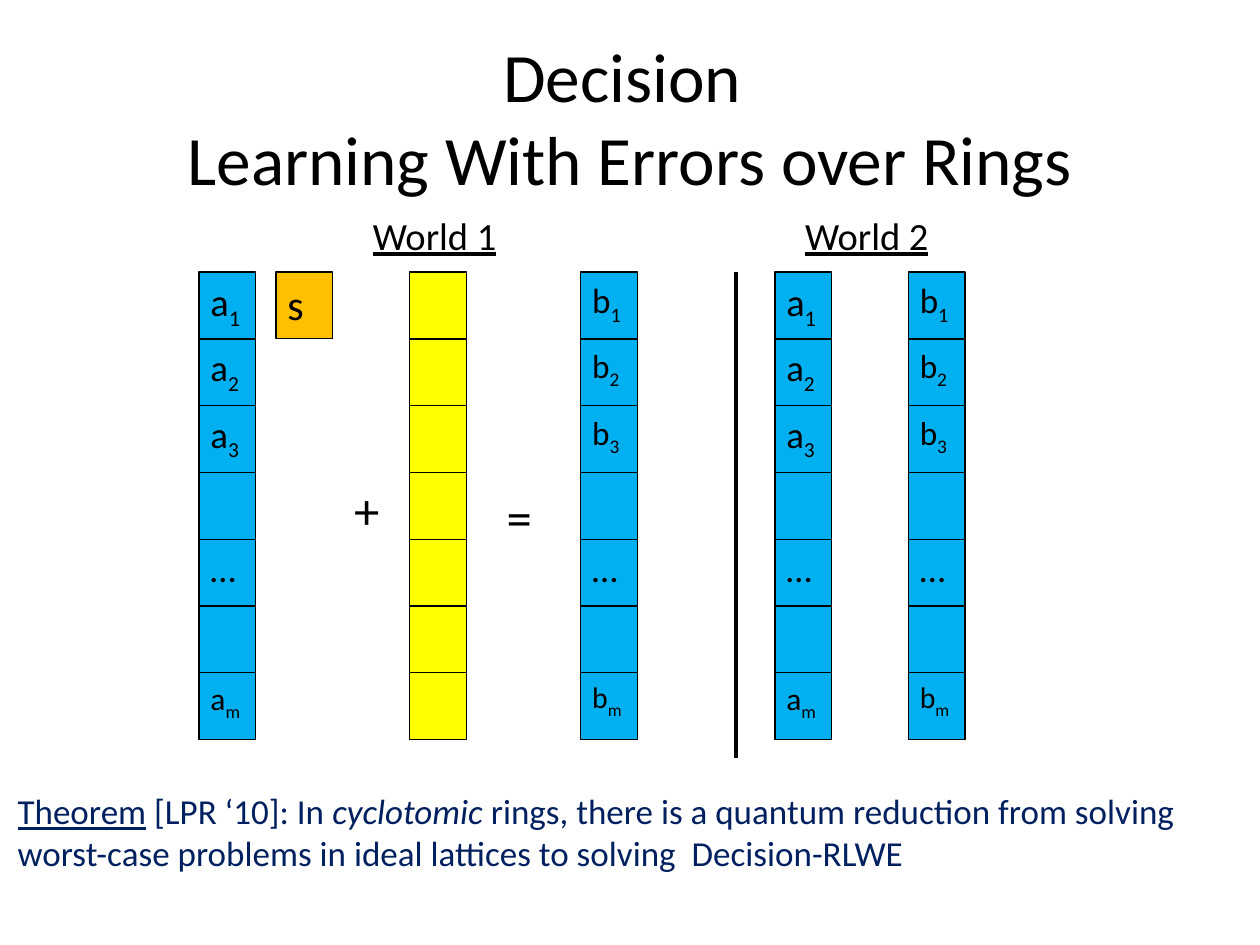
from lxml.etree import SubElement
from pptx import Presentation
from pptx.dml.color import RGBColor
from pptx.enum.shapes import MSO_CONNECTOR as Connector, MSO_SHAPE as Shape
from pptx.enum.text import MSO_ANCHOR as Anchor, PP_ALIGN as Align
from pptx.oxml.ns import qn
from pptx.util import Inches, Pt

COLORS = {"black": "000000", "blue": "00B0F0", "yellow": "FFFF00",
          "orange": "FFC000", "navy": "002060"}
FONT = "Calibri"
CELL_WIDTH, CELL_HEIGHT, GRID_TOP = 0.45, 0.53, 2.16

A_CELLS = [("a", "1", 22), ("a", "2", 21), ("a", "3", 21), None,
           ("…", "", 21), None, ("a", "m", 18)]
B_CELLS = [("b", "1", 20), ("b", "2", 19), ("b", "3", 19), None,
           ("…", "", 21), None, ("b", "m", 17)]
COLUMNS = [
    (1.58, "blue", A_CELLS),
    (2.19, "orange", [("s", "", 24)]),
    (3.25, "yellow", [None] * 7),
    (4.61, "blue", B_CELLS),
    (6.15, "blue", A_CELLS),
    (7.21, "blue", B_CELLS),
]
TITLE = [("Decision ", ""), ("\n", ""), ("Learning With Errors over Rings", "")]
THEOREM = [
    ("Theorem", "underline"),
    (" [LPR ‘10]: In ", ""),
    ("cyclotomic", "italic"),
    (" rings, there is a quantum reduction from solving worst-case problems"
     " in ideal lattices to solving  Decision-RLWE", ""),
]
TEXT_BOXES = [
    ((0.5, 0.3, 9, 1.25), TITLE,
     {"size": 39.6, "align": Align.CENTER, "anchor": Anchor.MIDDLE}),
    ((2.72, 3.75, 0.38, 0.58), [("+", "")], {"size": 29}),
    ((3.93, 3.81, 0.38, 0.58), [("=", "")], {"size": 29}),
    ((0.05, 6.22, 9.6, 0.76), THEOREM, {"size": 20, "color": "navy"}),
    ((2.87, 1.63, 1.36, 0.46), [("World 1", "underline")], {"size": 22}),
    ((6.3, 1.63, 1.36, 0.46), [("World 2", "underline")], {"size": 22}),
]


def rgb(name):
    return RGBColor.from_string(COLORS[name])


def write_text(shape, runs, size, color="black", align=Align.LEFT, anchor=Anchor.TOP):
    frame = shape.text_frame
    frame.word_wrap = True
    frame.vertical_anchor = anchor
    frame.margin_left = frame.margin_right = Inches(0.09)
    frame.margin_top = frame.margin_bottom = Inches(0.05)
    paragraph = frame.paragraphs[0]
    paragraph.alignment = align
    for text, style in runs:
        if text == "\n":
            paragraph.add_line_break()
            continue
        run = paragraph.add_run()
        run.text = text
        run.font.name = FONT
        run.font.size = Pt(size)
        run.font.color.rgb = rgb(color)
        if style == "underline":
            run.font.underline = True
        elif style == "italic":
            run.font.italic = True
        elif style == "subscript":
            run._r.get_or_add_rPr().set("baseline", "-25000")


def add_column(slide, left, fill, cells):
    for row, cell in enumerate(cells):
        shape = slide.shapes.add_shape(
            Shape.RECTANGLE, Inches(left), Inches(GRID_TOP + row * CELL_HEIGHT),
            Inches(CELL_WIDTH), Inches(CELL_HEIGHT))
        shape.shadow.inherit = False
        shape.fill.solid()
        shape.fill.fore_color.rgb = rgb(fill)
        shape.line.color.rgb = rgb("black")
        shape.line.width = Pt(0.75)
        if cell:
            letter, index, size = cell
            runs = [(letter, "")] + ([(index, "subscript")] if index else [])
            write_text(shape, runs, size)


def add_divider(slide, x, top, bottom):
    line = slide.shapes.add_connector(
        Connector.STRAIGHT, Inches(x), Inches(top), Inches(x), Inches(bottom))
    line.line.color.rgb = rgb("black")
    line.line.width = Pt(2)
    SubElement(line._element.spPr, qn("a:effectLst"))


def main():
    presentation = Presentation()
    presentation.slide_width, presentation.slide_height = Inches(10), Inches(7.5)
    slide = presentation.slides.add_slide(presentation.slide_layouts[6])
    for left, fill, cells in COLUMNS:
        add_column(slide, left, fill, cells)
    add_divider(slide, 5.84, GRID_TOP, 6.02)
    for bounds, runs, text_format in TEXT_BOXES:
        box = slide.shapes.add_textbox(*map(Inches, bounds))
        write_text(box, runs, **text_format)
    presentation.save("out.pptx")


if __name__ == "__main__":
    main()
